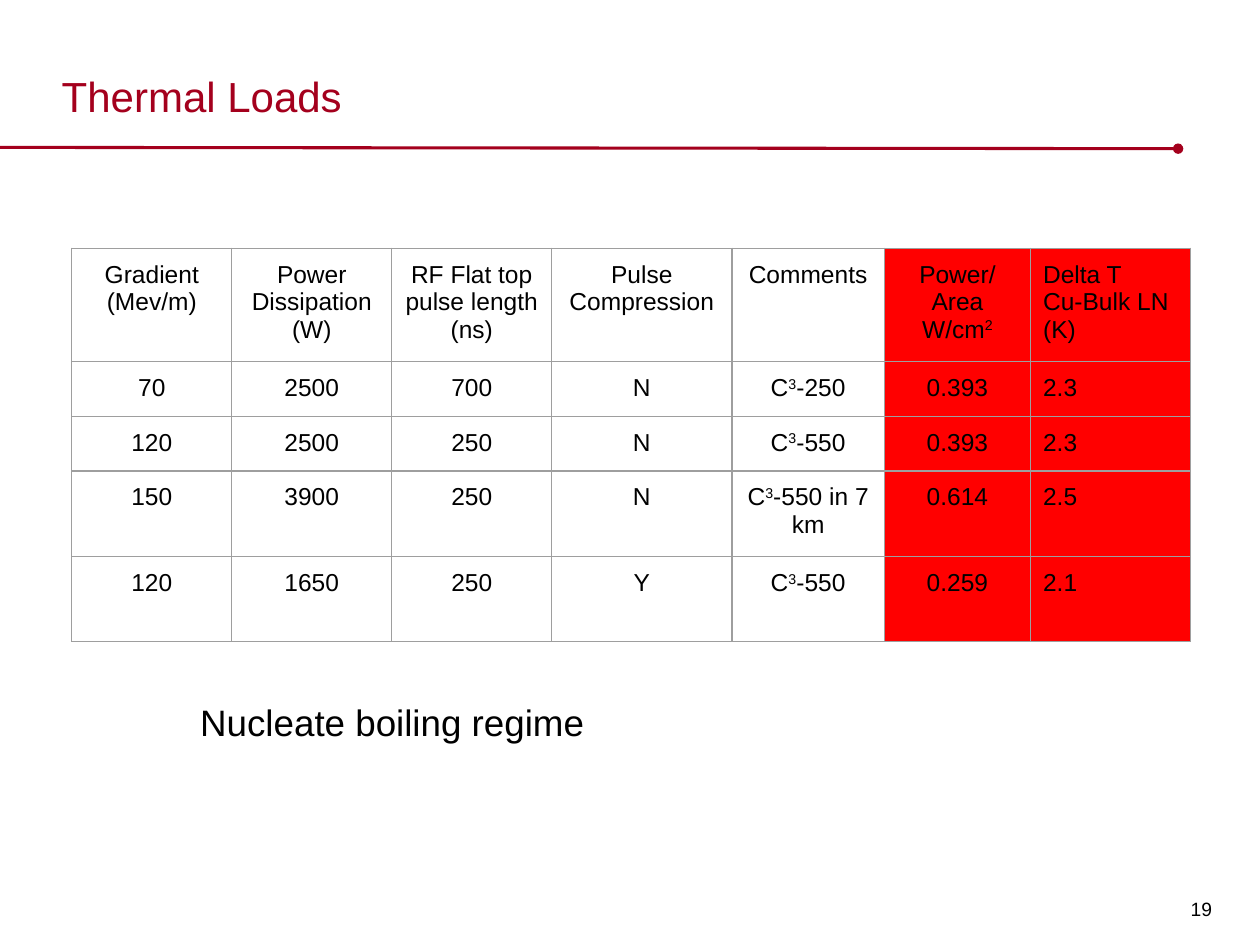
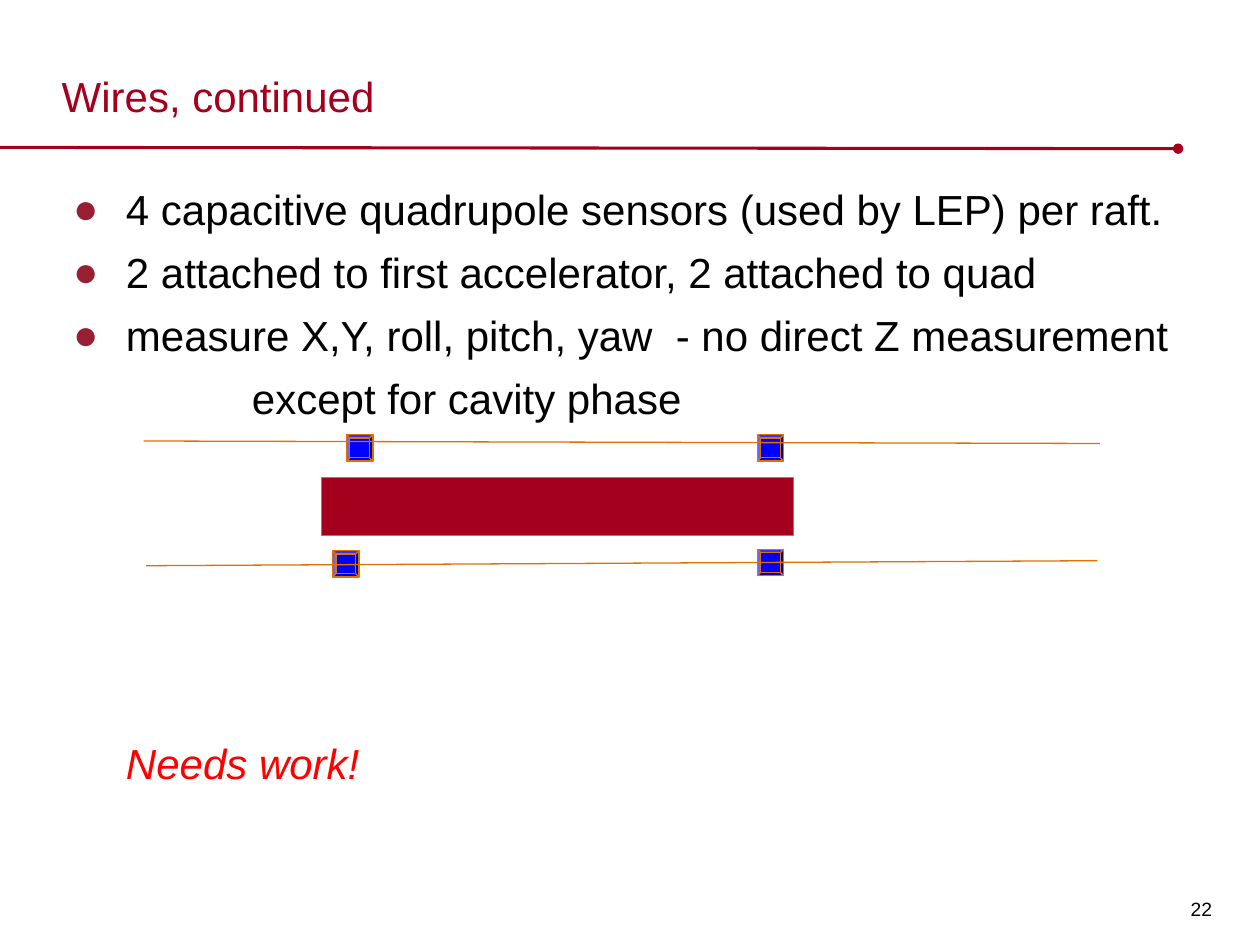
from lxml import etree
from pptx import Presentation
from pptx import util as u
from pptx.dml.color import RGBColor
from pptx.enum import shapes, text
from pptx.oxml import ns

INK = {"red": "A4001D", "dot": "981E32", "hot": "FF0000", "black": "000000",
       "blue": "0000FF", "wire": "E17000", "grid": "9E9E9E"}
FONT = "Arial"
MID = text.PP_ALIGN.CENTER
LEFT = text.PP_ALIGN.LEFT


def color(name):
    return RGBColor.from_string(INK[name])


def sub(node, tag, **attrs):
    return etree.SubElement(node, ns.qn(tag), **attrs)


class Deck:
    """Holds the style and the current slide."""

    def __init__(self):
        self.prs = Presentation()
        self.prs.slide_width = u.Inches(10)
        self.prs.slide_height = u.Inches(7.5)

    def page(self, title, num):
        """Start a slide with its title, rule and page number."""
        self.slide = self.prs.slides.add_slide(self.prs.slide_layouts[6])
        self.line(0, 1.17, 9.35, 1.18, "red", 1.75, dot=True)
        frame = self.box(9.37, 6.91, 0.35, 0.59, (0.08, 0.06, 0.08, 0.05),
                         text.MSO_ANCHOR.MIDDLE)
        self.runs(frame.paragraphs[0], num, 11)
        frame = self.box(0.49, 0.14, 8.86, 0.82, anchor=text.MSO_ANCHOR.BOTTOM)
        self.runs(frame.paragraphs[0], title, 24, "red")

    def box(self, x, y, w, h, pad=(0, 0, 0, 0), anchor=text.MSO_ANCHOR.TOP):
        frame = self.slide.shapes.add_textbox(
            *map(u.Inches, (x, y, w, h))).text_frame
        frame.word_wrap = True
        frame.vertical_anchor = anchor
        (frame.margin_left, frame.margin_top,
         frame.margin_right, frame.margin_bottom) = map(u.Inches, pad)
        return frame

    def runs(self, para, words, size, ink="black", italic=False):
        """Add runs; text between carets is raised."""
        for i, part in enumerate(words.split("^")):
            run = para.add_run()
            run.text = part
            font = run.font
            font.name, font.size = FONT, u.Pt(size)
            font.color.rgb = color(ink)
            if italic:
                font.italic = True
            if i % 2:
                run._r.get_or_add_rPr().set("baseline", "30000")

    def item(self, para, words, left=0.5, bullet=False, ink="black",
             italic=False, before=0):
        para.line_spacing = 1.25
        para.space_before = u.Pt(before)
        props = para._p.get_or_add_pPr()
        props.set("marL", str(u.Inches(left)))
        props.set("indent", str(u.Inches(-0.42 if bullet else 0)))
        if bullet:
            tint = sub(props, "a:buClr")
            sub(tint, "a:srgbClr", val=INK["dot"])
            sub(props, "a:buFont", typeface=FONT)
            sub(props, "a:buChar", char="●")
        else:
            sub(props, "a:buNone")
        self.runs(para, words, 24, ink, italic)

    def shape(self, kind, x, y, w, h, fill):
        form = self.slide.shapes.add_shape(kind, *map(u.Inches, (x, y, w, h)))
        form.shadow.inherit = False
        form.fill.solid()
        form.fill.fore_color.rgb = color(fill)
        form.line.color.rgb = color("wire")
        form.line.width = u.Pt(0.75)
        return form

    def line(self, x1, y1, x2, y2, ink, width=0.75, dot=False):
        wire = self.slide.shapes.add_connector(
            shapes.MSO_CONNECTOR.STRAIGHT, *map(u.Inches, (x1, y1, x2, y2)))
        wire.line.color.rgb = color(ink)
        wire.line.width = u.Pt(width)
        if dot:
            sub(wire.line._get_or_add_ln(), "a:tailEnd", type="oval")
        sub(wire._element.spPr, "a:effectLst")

    def table(self, x, y, cols, rows, data, hot):
        """Draw a grid; columns from index hot on are filled."""
        grid = self.slide.shapes.add_table(
            len(rows), len(cols), u.Inches(x), u.Inches(y),
            u.Inches(sum(cols)), u.Inches(sum(rows))).table
        grid.first_row = grid.horz_banding = False
        for col, width in zip(grid.columns, cols):
            col.width = u.Inches(width)
        for row, height in zip(grid.rows, rows):
            row.height = u.Inches(height)
        for r, line in enumerate(data):
            for c, words in enumerate(line):
                align = LEFT if c == len(cols) - 1 else MID
                self.cell(grid.cell(r, c), words, align, c >= hot)

    def cell(self, cell, words, align, hot):
        cell.margin_left = cell.margin_right = u.Inches(0.1)
        cell.margin_top = cell.margin_bottom = u.Inches(0.1)
        props = cell._tc.get_or_add_tcPr()
        for side in "LRTB":
            edge = sub(props, "a:ln" + side, w=str(u.Pt(0.75)))
            sub(sub(edge, "a:solidFill"), "a:srgbClr", val=INK["grid"])
        if hot:
            cell.fill.solid()
            cell.fill.fore_color.rgb = color("hot")
        else:
            cell.fill.background()
        frame = cell.text_frame
        for i, part in enumerate(words.split("\n")):
            para = frame.add_paragraph() if i else frame.paragraphs[0]
            para.alignment = align
            self.runs(para, part, 14)


def loads(deck):
    deck.page("Thermal Loads", "19")
    data = [
        ["Gradient (Mev/m)", "Power Dissipation (W)",
         "RF Flat top pulse length (ns)", "Pulse Compression", "Comments",
         "Power/Area\nW/cm^2", "Delta T\nCu-Bulk LN (K)"],
        ["70", "2500", "700", "N", "C^3^-250", "0.393", "2.3"],
        ["120", "2500", "250", "N", "C^3^-550", "0.393", "2.3"],
        ["150", "3900", "250", "N", "C^3^-550 in 7 km", "0.614", "2.5"],
        ["120", "1650", "250", "Y", "C^3^-550", "0.259", "2.1"],
    ]
    deck.table(0.57, 1.97, [1.27, 1.27, 1.27, 1.43, 1.21, 1.16, 1.27],
               [0.9, 0.43, 0.43, 0.68, 0.67], data, hot=5)
    note = deck.box(1.49, 5.45, 7.35, 0.56, (0.1, 0.1, 0.1, 0.1))
    deck.runs(note.paragraphs[0], "Nucleate boiling regime", 21)


def wires(deck):
    deck.page("Wires, continued", "22")

    # Bullet list and remark
    body = deck.box(0.5, 1.36, 8.87, 5.54)
    points = ["4 capacitive quadrupole sensors (used by LEP) per raft.",
              "2 attached to first accelerator, 2 attached to quad",
              "measure X,Y, roll, pitch, yaw  - no direct Z measurement"]
    for i, words in enumerate(points):
        para = body.add_paragraph() if i else body.paragraphs[0]
        deck.item(para, words, bullet=True)
    deck.item(body.add_paragraph(), "except for cavity phase", left=1.5)
    deck.item(body.add_paragraph(), "Needs work!", ink="hot", italic=True,
              before=172.5)

    # Raft, its four sensors and the two wires
    kind = shapes.MSO_SHAPE
    deck.shape(kind.RECTANGLE, 2.55, 3.79, 3.75, 0.46, "red")
    for x, y in [(2.75, 3.45), (6.01, 3.45), (2.64, 4.37), (6.01, 4.36)]:
        sensor = deck.shape(kind.BEVEL, x, y, 0.21, 0.21, "blue")
        sensor.adjustments[0] = 0.125
    deck.line(1.14, 3.5, 8.73, 3.52, "wire")
    deck.line(1.16, 4.49, 8.71, 4.45, "wire")


def main():
    deck = Deck()
    loads(deck)
    wires(deck)
    deck.prs.save("out.pptx")


if __name__ == "__main__":
    main()
